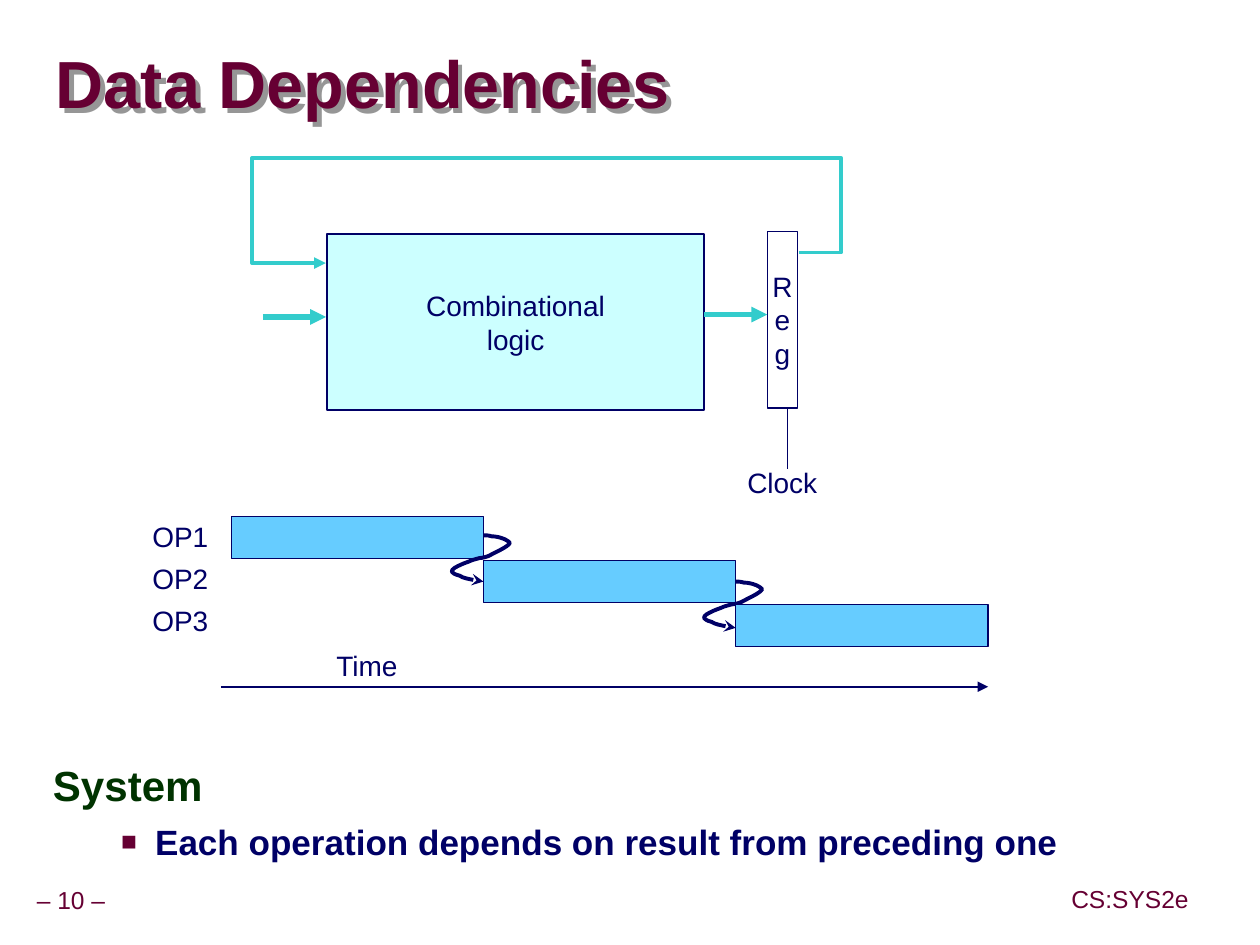
from dataclasses import dataclass
from typing import NamedTuple, Optional

from lxml.etree import Element, SubElement
from pptx import Presentation
from pptx.dml.color import RGBColor
from pptx.enum.shapes import MSO_CONNECTOR as Connector, MSO_SHAPE as Preset
from pptx.enum.text import MSO_ANCHOR as Anchor, PP_ALIGN as Align
from pptx.oxml.ns import qn
from pptx.util import Pt

MAROON = RGBColor(0x66, 0x00, 0x33)
NAVY = RGBColor(0x00, 0x00, 0x66)
GREEN = RGBColor(0x00, 0x33, 0x00)
TEAL = RGBColor(0x33, 0xCC, 0xCC)
PALE_CYAN = RGBColor(0xCC, 0xFF, 0xFF)
SKY = RGBColor(0x66, 0xCC, 0xFF)
WHITE = RGBColor(0xFF, 0xFF, 0xFF)
GRAY = RGBColor(0x96, 0x96, 0x96)

FONT = "Arial"
BAR_WIDTH, BAR_HEIGHT, BAR_STEP = 144, 24, 25.2
BAR_LEFT, BAR_TOP = 132, 294.7
HOOK_TOP, HOOK_STEP = 305.5, 26.4

Point = tuple[float, float]
HOOK: list[tuple[Point, Point, Point]] = [
    ((5, 0), (2.9, 0.7), (6.5, 0.7)),
    ((11.5, 1.4), (13.7, 2.9), (15.1, 4.3)),
    ((14.4, 6.5), (5.8, 10.1), (3.6, 11.5)),
    ((2.2, 12.2), (-0.7, 13), (-2.2, 13)),
    ((-4.3, 13.7), (-5.8, 13.7), (-8.6, 15.1)),
    ((-10.8, 15.8), (-14.4, 17.3), (-16.6, 18.7)),
    ((-18, 19.4), (-18, 20.2), (-18, 20.9)),
    ((-17.3, 21.6), (-16.6, 22.3), (-13.7, 23)),
    ((-11.5, 24.5), (-3.6, 25.9), (-1.4, 26.4)),
    ((0, 25.9), (0, 25.9), (0, 26.4)),
]


@dataclass
class Box:
    left: float
    top: float
    width: float
    height: float
    text: str = ""
    size: float = 16
    color: RGBColor = NAVY
    bold: bool = False
    align: Align = Align.CENTER
    anchor: Anchor = Anchor.MIDDLE
    inset: tuple[float, float] = (7.2, 3.6)
    spacing: float = 1
    wrap: bool = False
    fill: Optional[RGBColor] = None
    outline: float = 0


class Line(NamedTuple):
    start: Point
    end: Point
    color: RGBColor
    width: float
    arrow: bool = True


TITLE = Box(31.9, 19.4, 685.4, 61.2, "Data Dependencies", 38, MAROON, True,
            Align.LEFT, inset=(0, 0), spacing=0.87, wrap=True)
BODY = Box(23.2, 432, 653, 74.2,
           "System\nEach operation depends on result from preceding one",
           20, NAVY, True, Align.LEFT, Anchor.TOP, wrap=True)
BOXES = [
    Box(16.8, 503.3, 47.5, 22.3, "– 10 –", 14, MAROON, inset=(3.6, 3.6), spacing=0.9),
    Box(607.7, 502.6, 74.9, 22.3, "CS:SYS2e", 14, MAROON, inset=(3.6, 3.6), spacing=0.9),
    Box(418.6, 262.1, 56, 25.9, "Clock", anchor=Anchor.TOP),
    Box(186.7, 133.4, 215.3, 100.8, "Combinational\nlogic", fill=PALE_CYAN, outline=1),
    Box(438.1, 132.1, 17.3, 100.8, "R\ne\ng", fill=WHITE, outline=1),
    Box(185, 366.5, 50, 25.9, "Time", align=Align.LEFT, anchor=Anchor.TOP),
]
LINES = [
    Line((150.1, 180.9), (186.1, 180.9), TEAL, 3),
    Line((402, 179.5), (438, 179.5), TEAL, 3),
    Line((449.6, 233.5), (449.6, 267.9), NAVY, 1, False),
    Line((126.1, 391.9), (564.1, 391.9), NAVY, 1),
]
FEEDBACK: list[Point] = [(456.1, 144.1), (480.1, 144.1), (480.1, 90.1),
                         (144, 90.1), (144, 150.1), (186, 150.1)]


def style_line(shape, color: RGBColor, width: float, head: str = "") -> None:
    shape.line.color.rgb = color
    shape.line.width = Pt(width)
    if head:
        SubElement(shape._element.spPr.find(qn("a:ln")), qn("a:tailEnd"), type=head)


def add_box(slide, item: Box):
    area = Pt(item.left), Pt(item.top), Pt(item.width), Pt(item.height)
    if item.fill is None:
        shape = slide.shapes.add_textbox(*area)
    else:
        shape = slide.shapes.add_shape(Preset.RECTANGLE, *area)
        shape.shadow.inherit = False
        shape.fill.solid()
        shape.fill.fore_color.rgb = item.fill
        if item.outline:
            style_line(shape, NAVY, item.outline)
        else:
            shape.line.fill.background()
    frame = shape.text_frame
    frame.text = item.text
    frame.word_wrap = item.wrap
    frame.vertical_anchor = item.anchor
    frame.margin_left = frame.margin_right = Pt(item.inset[0])
    frame.margin_top = frame.margin_bottom = Pt(item.inset[1])
    for para in frame.paragraphs:
        para.alignment = item.align
        para.line_spacing = item.spacing
        for span in para.runs:
            span.font.size = Pt(item.size)
            span.font.bold = item.bold
            span.font.color.rgb = item.color
            span.font.name = FONT
    return shape


def add_line(slide, item: Line) -> None:
    ends = [Pt(value) for value in (*item.start, *item.end)]
    line = slide.shapes.add_connector(Connector.STRAIGHT, *ends)
    style_line(line, item.color, item.width, "triangle" if item.arrow else "")
    SubElement(line._element.spPr, qn("a:effectLst"))


def add_route(slide, points: list[Point], color: RGBColor, head: str):
    first, *rest = [(Pt(x), Pt(y)) for x, y in points]
    builder = slide.shapes.build_freeform(*first)
    builder.add_line_segments(rest, close=False)
    route = builder.convert_to_shape()
    route.shadow.inherit = False
    route.fill.background()
    style_line(route, color, 2.25, head)
    return route


def add_hook(slide, left: float, top: float) -> None:
    knots = [(left, top)] + [(left + x, top + y) for _, _, (x, y) in HOOK]
    route = add_route(slide, knots, NAVY, "stealth")
    segments = list(route._element.iter(qn("a:lnTo")))
    for segment, (first, second, _) in zip(segments, HOOK):
        segment.tag = qn("a:cubicBezTo")
        for index, (x, y) in enumerate((first, second)):
            control = Element(qn("a:pt"), x=str(Pt(left + x) - route.left),
                              y=str(Pt(top + y) - route.top))
            segment.insert(index, control)


def add_title(slide) -> None:
    title = add_box(slide, TITLE)
    effects = SubElement(title._element.spPr, qn("a:effectLst"))
    shadow = SubElement(effects, qn("a:outerShdw"), dist=str(Pt(4)), dir="2700000",
                        algn="ctr", rotWithShape="0")
    SubElement(shadow, qn("a:srgbClr"), val=str(GRAY))


def add_body(slide) -> None:
    heading, bullet = add_box(slide, BODY).text_frame.paragraphs
    heading.line_spacing = 0.95
    heading.runs[0].font.size = Pt(24)
    heading.runs[0].font.color.rgb = GREEN
    bullet.level = 1
    bullet.space_before = Pt(5.2)
    props = bullet._element.get_or_add_pPr()
    props.set("marL", str(Pt(58.3)))
    props.set("indent", str(-Pt(19.4)))
    SubElement(SubElement(props, qn("a:buClr")), qn("a:srgbClr"), val=str(MAROON))
    SubElement(props, qn("a:buSzPct"), val="75000")
    SubElement(props, qn("a:buFont"), typeface=FONT)
    SubElement(props, qn("a:buChar"), char="■")


def add_timeline(slide) -> None:
    for index in range(3):
        add_box(slide, Box(59.8, 293.8 + 24 * index, 66.2, 24, f"OP{index + 1}",
                           align=Align.RIGHT, fill=WHITE))
    for index in range(3):
        left = BAR_LEFT + BAR_WIDTH * index
        add_box(slide, Box(left, BAR_TOP + BAR_STEP * index, BAR_WIDTH, BAR_HEIGHT,
                           fill=SKY, outline=0.75))
        if index < 2:
            add_hook(slide, left + BAR_WIDTH, HOOK_TOP + HOOK_STEP * index)


def main() -> None:
    """Build the data dependencies slide."""
    deck = Presentation()
    deck.slide_width, deck.slide_height = Pt(719.3), Pt(539.3)
    page = deck.slides.add_slide(deck.slide_layouts[6])
    add_title(page)
    add_body(page)
    for item in BOXES:
        add_box(page, item)
    for line in LINES:
        add_line(page, line)
    add_route(page, FEEDBACK, TEAL, "triangle")
    add_timeline(page)
    deck.save("out.pptx")


if __name__ == "__main__":
    main()
